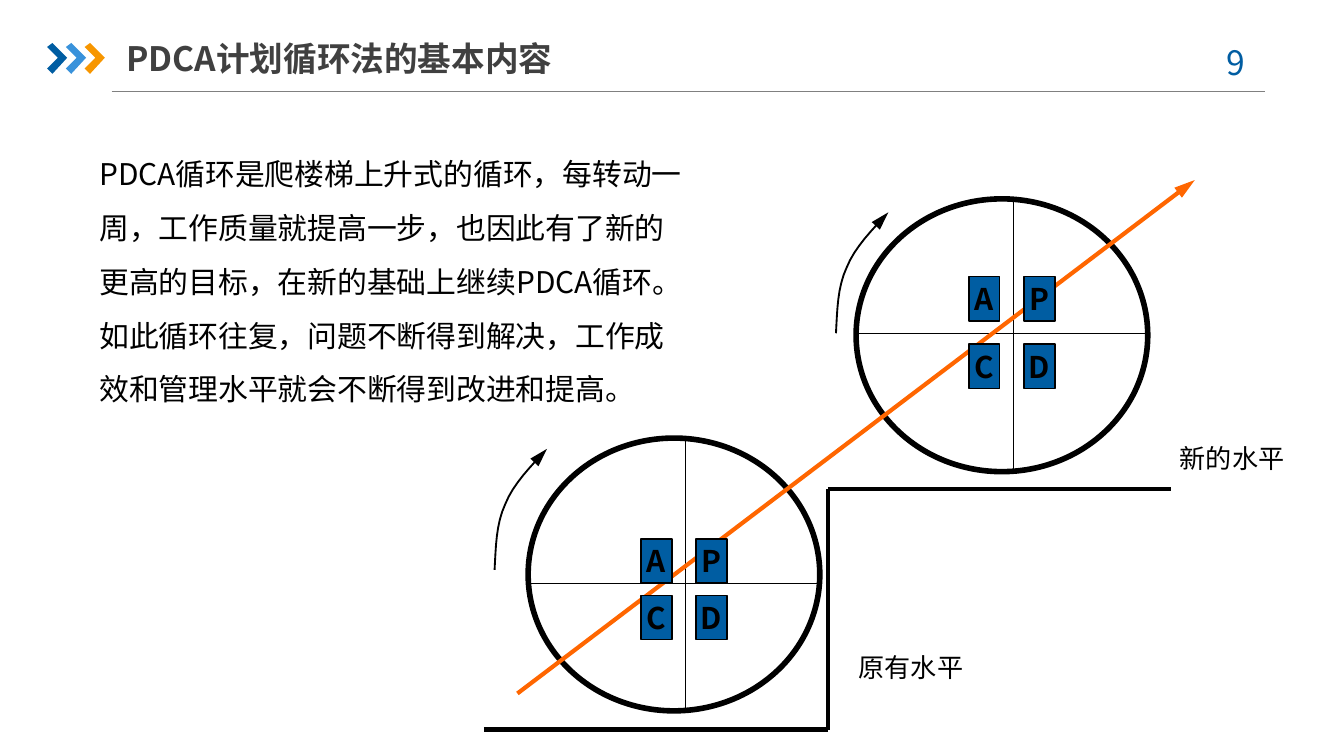
from pptx import Presentation, util as u
from pptx.dml.color import RGBColor
from pptx.enum import shapes, text
from pptx.oxml.ns import qn
from lxml import etree

THEME = {
    "font": "Noto Sans CJK SC",
    "blue": "005DA2", "sky": "3992DB", "amber": "F79600", "orange": "FF6600",
    "black": "000000", "title": "404040", "grey": "808080",
    "title_size": 18, "body_size": 16, "label_size": 14,
}

TITLE = "PDCA计划循环法的基本内容"
BODY = ("PDCA循环是爬楼梯上升式的循环，每转动一周，工作质量就提高一步，"
        "也因此有了新的更高的目标，在新的基础上继续PDCA循环。"
        "如此循环往复，问题不断得到解决，工作成效和管理水平就会不断得到改进和提高。")
PAGE_NUMBER = "9"
LEVELS = [("原有水平", 6.29, 4.8, 1.37), ("新的水平", 8.68, 3.24, 1.29)]
CHEVRON_COLORS = ["blue", "sky", "amber"]
CHEVRON = [(0, 0.03), (0.04, 0), (0.15, 0.11), (0.04, 0.23), (0, 0.19), (0.08, 0.11)]
STAIRS = [(3.6, 5.43), (6.16, 5.43), (6.16, 3.64), (8.71, 3.64)]
CYCLES = [
    {"left": 3.93, "top": 3.26, "axis": 1.08, "rows": (0.75, 1.17), "turn": (3.68, 4.24)},
    {"left": 6.37, "top": 1.48, "axis": 1.0, "rows": (0.58, 1.08), "turn": (6.22, 2.48)},
]
STAGES = [["A", "P"], ["C", "D"]]
STAGE_COLUMNS = (0.84, 1.25)
CYCLE_WIDTH, CYCLE_HEIGHT, UPRIGHT = 2.17, 2.03, 1.17
TURN_CURVES = [
    [(0, 0), (0.01, -0.17), (0.01, -0.34), (0.08, -0.49)],
    [(0.08, -0.49), (0.14, -0.64), (0.27, -0.77), (0.39, -0.9)],
]
CURVE_STEPS = 8


def color(name):
    return RGBColor.from_string(THEME[name])


def style_line(shape, name, width, arrow=False):
    shape.line.color.rgb = color(name)
    shape.line.width = u.Pt(width)
    if arrow:
        outline = shape._element.spPr.find(qn("a:ln"))
        etree.SubElement(outline, qn("a:tailEnd"), type="triangle", w="med", len="lg")


def add_line(slide, start, end, name, width, arrow=False):
    points = [u.Inches(value) for value in (*start, *end)]
    line = slide.shapes.add_connector(shapes.MSO_CONNECTOR.STRAIGHT, *points)
    style_line(line, name, width, arrow)
    etree.SubElement(line._element.spPr, qn("a:effectLst"))


def add_outline(slide, points, close):
    points = [(u.Inches(x), u.Inches(y)) for x, y in points]
    builder = slide.shapes.build_freeform(*points[0])
    builder.add_line_segments(points[1:], close=close)
    shape = builder.convert_to_shape()
    shape.shadow.inherit = False
    return shape


def write(shape, words, size, name="black", bold=False, align=text.PP_ALIGN.LEFT):
    paragraph = shape.text_frame.paragraphs[0]
    paragraph.text = words
    paragraph.alignment = align
    font = paragraph.font
    font.name, font.size, font.bold = THEME["font"], u.Pt(size), bold
    font.color.rgb = color(name)
    etree.SubElement(font._element, qn("a:ea"), typeface=THEME["font"])
    return paragraph


def add_text(slide, words, left, top, width, height, size, **style):
    box = slide.shapes.add_textbox(*map(u.Inches, (left, top, width, height)))
    box.text_frame.word_wrap = True
    return write(box, words, size, **style)


def add_header(slide):
    title = slide.shapes.title
    title.left, title.top, title.width, title.height = map(u.Inches, (0.94, 0.22, 6.98, 0.42))
    frame = title.text_frame
    frame.auto_size = text.MSO_AUTO_SIZE.NONE
    frame.vertical_anchor = text.MSO_ANCHOR.MIDDLE
    frame.margin_left = frame.margin_right = 0
    write(title, TITLE, THEME["title_size"], "title", True)
    add_line(slide, (0.83, 0.68), (9.41, 0.68), "grey", 0.75)
    for index, name in enumerate(CHEVRON_COLORS):
        left = 0.35 + 0.14 * index
        chevron = add_outline(slide, [(left + x, 0.32 + y) for x, y in CHEVRON], True)
        chevron.fill.solid()
        chevron.fill.fore_color.rgb = color(name)
        chevron.line.fill.background()
    add_text(slide, PAGE_NUMBER, 8.83, 0.26, 0.73, 0.4, THEME["title_size"],
             name="blue", align=text.PP_ALIGN.CENTER)


def curve_point(curve, t):
    weights = ((1 - t) ** 3, 3 * t * (1 - t) ** 2, 3 * t * t * (1 - t), t ** 3)
    return tuple(sum(w * p[axis] for w, p in zip(weights, curve)) for axis in (0, 1))


def add_cycle(slide, cycle):
    left, top = cycle["left"], cycle["top"]
    wheel = slide.shapes.add_shape(shapes.MSO_SHAPE.OVAL, *map(
        u.Inches, (left, top, CYCLE_WIDTH, CYCLE_HEIGHT)))
    wheel.shadow.inherit = False
    wheel.fill.background()
    style_line(wheel, "black", 3)
    axis, upright = top + cycle["axis"], left + UPRIGHT
    add_line(slide, (left, axis), (left + CYCLE_WIDTH, axis), "black", 0.75)
    add_line(slide, (upright, top), (upright, top + CYCLE_HEIGHT), "black", 0.75)
    x, y = cycle["turn"]
    offsets = [(0, 0)] + [curve_point(curve, step / CURVE_STEPS)
                          for curve in TURN_CURVES for step in range(1, CURVE_STEPS + 1)]
    turn = add_outline(slide, [(x + dx, y + dy) for dx, dy in offsets], False)
    turn.fill.background()
    style_line(turn, "black", 1, arrow=True)


def add_stages(slide, cycle):
    for row, letters in zip(cycle["rows"], STAGES):
        for column, letter in zip(STAGE_COLUMNS, letters):
            tile = slide.shapes.add_shape(shapes.MSO_SHAPE.RECTANGLE, *map(
                u.Inches, (cycle["left"] + column, cycle["top"] + row, 0.23, 0.33)))
            tile.shadow.inherit = False
            tile.fill.solid()
            tile.fill.fore_color.rgb = color("blue")
            style_line(tile, "black", 0.75)
            tile.text_frame.word_wrap = False
            tile.text_frame.vertical_anchor = text.MSO_ANCHOR.MIDDLE
            write(tile, letter, THEME["body_size"], bold=True, align=text.PP_ALIGN.CENTER)


def main():
    presentation = Presentation()
    presentation.slide_width = u.Inches(10)
    presentation.slide_height = presentation.slide_width * 9 // 16
    slide = presentation.slides.add_slide(presentation.slide_layouts[5])
    add_header(slide)
    for start, end in zip(STAIRS, STAIRS[1:]):
        add_line(slide, start, end, "black", 2.5)
    for cycle in CYCLES:
        add_cycle(slide, cycle)
    add_line(slide, (3.85, 5.16), (8.89, 1.34), "orange", 2.25, arrow=True)
    for cycle in CYCLES:
        add_stages(slide, cycle)
    for words, left, top, width in LEVELS:
        add_text(slide, words, left, top, width, 0.34, THEME["label_size"])
    body = add_text(slide, BODY, 0.64, 0.98, 4.61, 2.07, THEME["body_size"])
    body.line_spacing = 1.5
    presentation.save("out.pptx")


if __name__ == "__main__":
    main()
